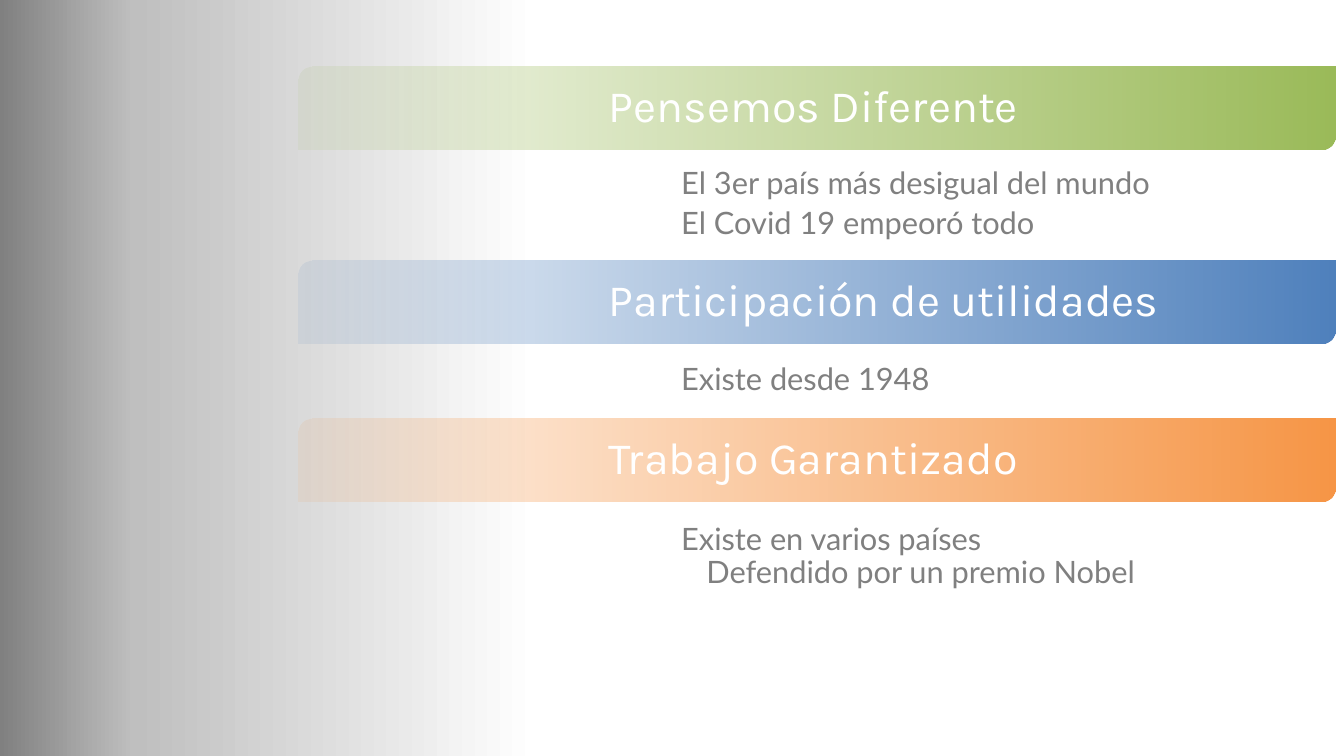
"""Build a slide with three gradient headings and the points under each."""
from lxml.etree import SubElement
from pptx import Presentation
from pptx.dml.color import RGBColor
from pptx.enum.shapes import MSO_SHAPE as Shape
from pptx.enum.text import MSO_ANCHOR as Anchor, PP_ALIGN as Align
from pptx.oxml.ns import qn
from pptx.util import Pt

WHITE = RGBColor(0xFF, 0xFF, 0xFF)
SILVER = RGBColor(0xBF, 0xBF, 0xBF)
GRAY = RGBColor(0x80, 0x80, 0x80)
GREEN = RGBColor(0x9B, 0xBB, 0x59)
BLUE = RGBColor(0x4F, 0x81, 0xBD)
ORANGE = RGBColor(0xF7, 0x96, 0x46)

# Each section: heading, colour, height of its points, (point, indent) pairs
SECTIONS = [
    ("Pensemos Diferente", GREEN, 79.6,
     [("El 3er país más desigual del mundo", 0), ("El Covid 19 empeoró todo", 0)]),
    ("Participación de utilidades", BLUE, 54,
     [("Existe desde 1948", 0)]),
    ("Trabajo Garantizado", ORANGE, 79.6,
     [("Existe en varios países", 0), ("Defendido por un premio Nobel", 18)]),
]
BACKGROUND_STOPS = [(60, WHITE, 100), (90, SILVER, 100), (100, GRAY, 100)]

LEFT, TOP, WIDTH, BAR_HEIGHT = 213, 47.5, 741, 59
HEADING_INSET, POINTS_INSET = 219, 273.6


def set_gradient(fill, owner, angle, stops):
    fill.gradient()
    fill.gradient_angle = angle
    stop_list = next(owner.iter(qn("a:gsLst")))
    for old_stop in list(stop_list):
        stop_list.remove(old_stop)
    for position, color, opacity in stops:
        stop = SubElement(stop_list, qn("a:gs"), pos=str(position * 1000))
        shade = SubElement(stop, qn("a:srgbClr"), val=str(color))
        if opacity < 100:
            SubElement(shade, qn("a:alpha"), val=str(opacity * 1000))


def write_lines(shape, lines, inset, font_name, size, color):
    frame = shape.text_frame
    frame.word_wrap = True
    frame.vertical_anchor = Anchor.MIDDLE
    frame.margin_left, frame.margin_right = Pt(inset), Pt(12)
    frame.margin_top = frame.margin_bottom = Pt(9)
    for index, (text, indent) in enumerate(lines):
        para = frame.paragraphs[0] if index == 0 else frame.add_paragraph()
        para.text = text
        para.alignment = Align.LEFT
        para.line_spacing = 0.9
        para.space_after = Pt(0 if lines[-1][1] else 5)
        para.font.name, para.font.size = font_name, Pt(size)
        para.font.color.rgb = color
        if indent:
            para._p.get_or_add_pPr().set("marL", str(Pt(indent)))


def main():
    deck = Presentation()
    deck.slide_width, deck.slide_height = Pt(960), Pt(540)
    page = deck.slides.add_slide(deck.slide_layouts[6])
    set_gradient(page.background.fill, page._element, 180, BACKGROUND_STOPS)

    top = TOP
    for heading, color, points_height, points in SECTIONS:
        bar = page.shapes.add_shape(Shape.ROUND_2_DIAG_RECTANGLE, Pt(LEFT), Pt(top),
                                    Pt(WIDTH), Pt(BAR_HEIGHT))
        bar.shadow.inherit = False
        bar.line.fill.background()
        set_gradient(bar.fill, bar._element, 0, [(0, color, 10), (100, color, 100)])
        write_lines(bar, [(heading, 0)], HEADING_INSET, "Karla", 32, WHITE)
        top += BAR_HEIGHT

        box = page.shapes.add_textbox(Pt(LEFT), Pt(top), Pt(WIDTH), Pt(points_height))
        write_lines(box, points, POINTS_INSET, "Lato", 22, GRAY)
        top += points_height

    deck.save("out.pptx")


if __name__ == "__main__":
    main()
